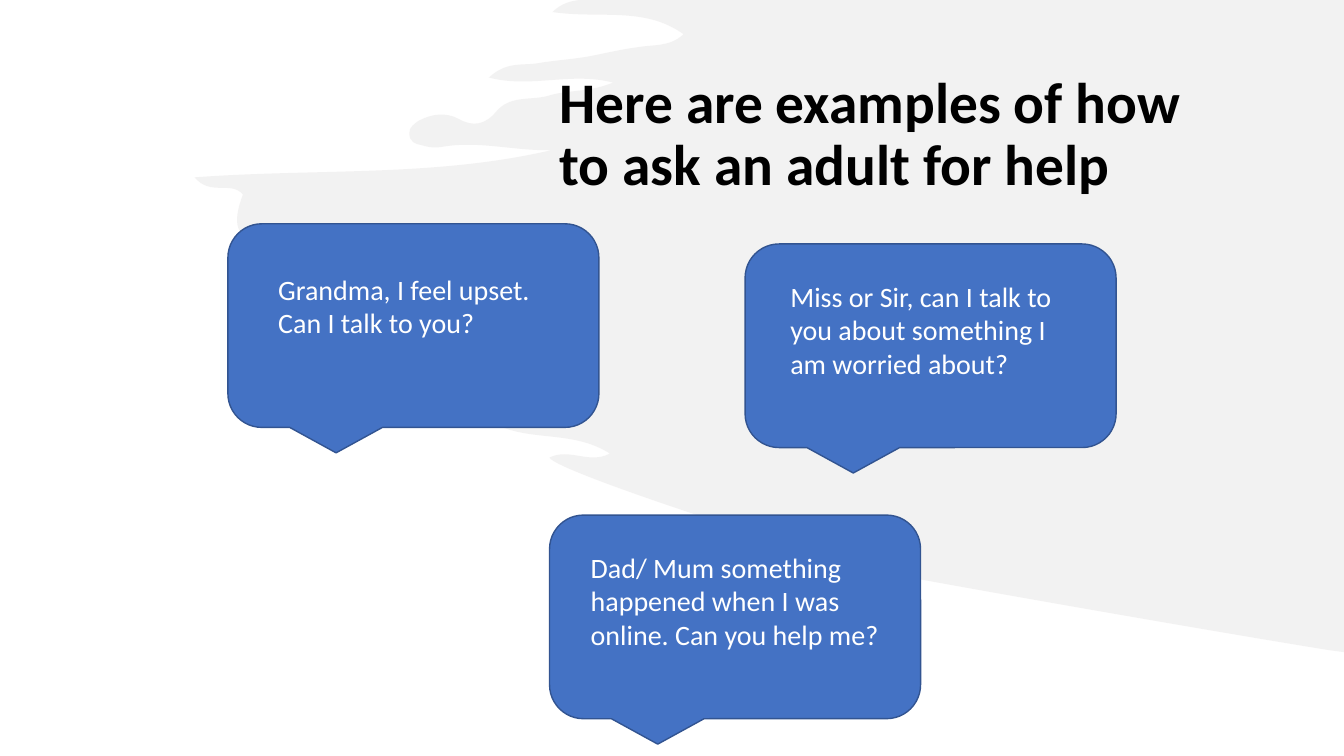
import pptx
import pptx.util
import pptx.dml.color
import pptx.enum.shapes
import pptx.enum.text
import pptx.oxml.ns
import lxml.etree
from dataclasses import dataclass

COLS, ROWS = 160, 90
BRUSH_UNITS = 1333  # brush coordinates across the slide's width


@dataclass(frozen=True)
class Theme:
    font: str = "Calibri"
    title_size: int = 41
    speech_size: int = 20
    title: str = "000000"
    speech: str = "FFFFFF"
    bubble: str = "4472C4"
    bubble_line: str = "325491"
    brush: str = "E7E6E6"
    brush_opacity: int = 50
    background: str = "FFFFFF"


THEME = Theme()

BRUSH_TOP = [(1333, 0), (575, 0)]
BRUSH_END = (1333, 647)
# Two control points and an end point of each Bézier curve.
BRUSH_CURVES = [
    (567, 1, 557, 3, 548, 12), (595, 19, 639, 6, 678, 34),
    (664, 47, 648, 44, 632, 47), (616, 49, 600, 53, 584, 56),
    (567, 59, 549, 60, 532, 63), (518, 65, 502, 61, 485, 77),
    (527, 88, 566, 71, 608, 82), (584, 92, 563, 89, 544, 95),
    (527, 100, 506, 94, 492, 111), (481, 124, 469, 126, 455, 118),
    (442, 111, 428, 113, 415, 120), (411, 123, 406, 126, 406, 132),
    (406, 141, 412, 143, 418, 144), (424, 146, 431, 147, 437, 146),
    (474, 139, 510, 150, 547, 149), (431, 176, 314, 167, 193, 176),
    (209, 195, 229, 179, 241, 193), (230, 222, 234, 237, 258, 239),
    (280, 241, 304, 231, 316, 265), (320, 276, 341, 273, 355, 275),
    (384, 279, 414, 275, 442, 288), (453, 293, 460, 297, 455, 311),
    (449, 325, 456, 330, 466, 336), (473, 340, 483, 339, 489, 352),
    (428, 350, 369, 340, 309, 350), (375, 374, 447, 373, 512, 402),
    (510, 412, 495, 407, 494, 422), (528, 438, 569, 427, 605, 450),
    (584, 461, 565, 444, 545, 454), (552, 469, 840, 561, 892, 571),
    (978, 587, 1195, 625, 1318, 645),
]

TITLE = ("Here are examples of how to ask an adult for help",
         (65.42, 3.72, 83.66, 24.84))
BUBBLE_SIZE = (44.17, 24.24)
BUBBLE_CORNERS = [(27.13, 26.64), (88.7, 29.04), (65.42, 61.32)]
SPEECHES = [
    ("Grandma, I feel upset. Can I talk to you?",
     (31.93, 31.8, 33.49, 9.24)),
    ("Miss or Sir, can I talk to you about something I am worried about?",
     (92.9, 32.64, 33.49, 13.32)),
    ("Dad/ Mum something happened when I was online. Can you help me?",
     (69.14, 64.92, 36.85, 13.32)),
]


def rgb(value):
    return pptx.dml.color.RGBColor.from_string(value)


def grid(prs, box):
    """Turn columns and rows into slide lengths."""
    col, row = prs.slide_width / COLS, prs.slide_height / ROWS
    return [round(n * unit) for n, unit in zip(box, (col, row, col, row))]


def paint(sp, fill):
    sp.shadow.inherit = False
    sp.fill.solid()
    sp.fill.fore_color.rgb = rgb(fill)


def set_opacity(sp, percent):
    color = sp.element.xpath("./p:spPr/a:solidFill/a:srgbClr")[0]
    alpha = lxml.etree.SubElement(color, pptx.oxml.ns.qn("a:alpha"))
    alpha.set("val", str(percent * 1000))


def bend(line, curve, left):
    """Turn a line segment into a Bézier curve with the same end point."""
    line.tag = pptx.oxml.ns.qn("a:cubicBezTo")
    for i, (x, y) in enumerate((curve[:2], curve[2:4])):
        pt = line.makeelement(pptx.oxml.ns.qn("a:pt"),
                              {"x": str(x - left), "y": str(y)})
        line.insert(i, pt)


def add_brush(prs, s):
    ends = [curve[4:] for curve in BRUSH_CURVES]
    builder = s.shapes.build_freeform(
        *BRUSH_TOP[0], scale=prs.slide_width / BRUSH_UNITS)
    builder.add_line_segments(BRUSH_TOP[1:] + ends + [BRUSH_END], close=True)
    sp = builder.convert_to_shape()
    left = min(x for x, _ in ends)
    lines = sp.element.xpath(".//a:lnTo")[1:]
    for line, curve in zip(lines, BRUSH_CURVES):
        bend(line, curve, left)
    paint(sp, THEME.brush)
    set_opacity(sp, THEME.brush_opacity)
    sp.line.fill.background()


def add_bubble(prs, s, corner):
    kind = pptx.enum.shapes.MSO_SHAPE.ROUNDED_RECTANGULAR_CALLOUT
    sp = s.shapes.add_shape(kind, *grid(prs, corner + BUBBLE_SIZE))
    paint(sp, THEME.bubble)
    sp.line.color.rgb = rgb(THEME.bubble_line)
    sp.line.width = pptx.util.Pt(1)


def add_text(prs, s, text, box, size, color, bold=False):
    tf = s.shapes.add_textbox(*grid(prs, box)).text_frame
    tf.word_wrap = True
    tf.text = text
    p = tf.paragraphs[0]
    font = p.runs[0].font
    font.name, font.size, font.bold = THEME.font, pptx.util.Pt(size), bold
    font.color.rgb = rgb(color)
    return tf, p


def add_title(prs, s):
    tf, p = add_text(prs, s, *TITLE, THEME.title_size, THEME.title, bold=True)
    tf.vertical_anchor = pptx.enum.text.MSO_ANCHOR.MIDDLE
    p.line_spacing = 0.9


def add_speech(prs, s, text, box):
    tf, p = add_text(prs, s, text, box, THEME.speech_size, THEME.speech)
    tf.auto_size = pptx.enum.text.MSO_AUTO_SIZE.SHAPE_TO_FIT_TEXT
    p.space_after = pptx.util.Pt(6)


def main():
    prs = pptx.Presentation()
    prs.slide_width = pptx.util.Inches(13.33)
    prs.slide_height = pptx.util.Inches(7.5)
    s = prs.slides.add_slide(prs.slide_layouts[6])
    s.background.fill.solid()
    s.background.fill.fore_color.rgb = rgb(THEME.background)
    add_brush(prs, s)
    add_title(prs, s)
    for corner in BUBBLE_CORNERS:
        add_bubble(prs, s, corner)
    for text, box in SPEECHES:
        add_speech(prs, s, text, box)
    prs.save("out.pptx")


if __name__ == "__main__":
    main()
